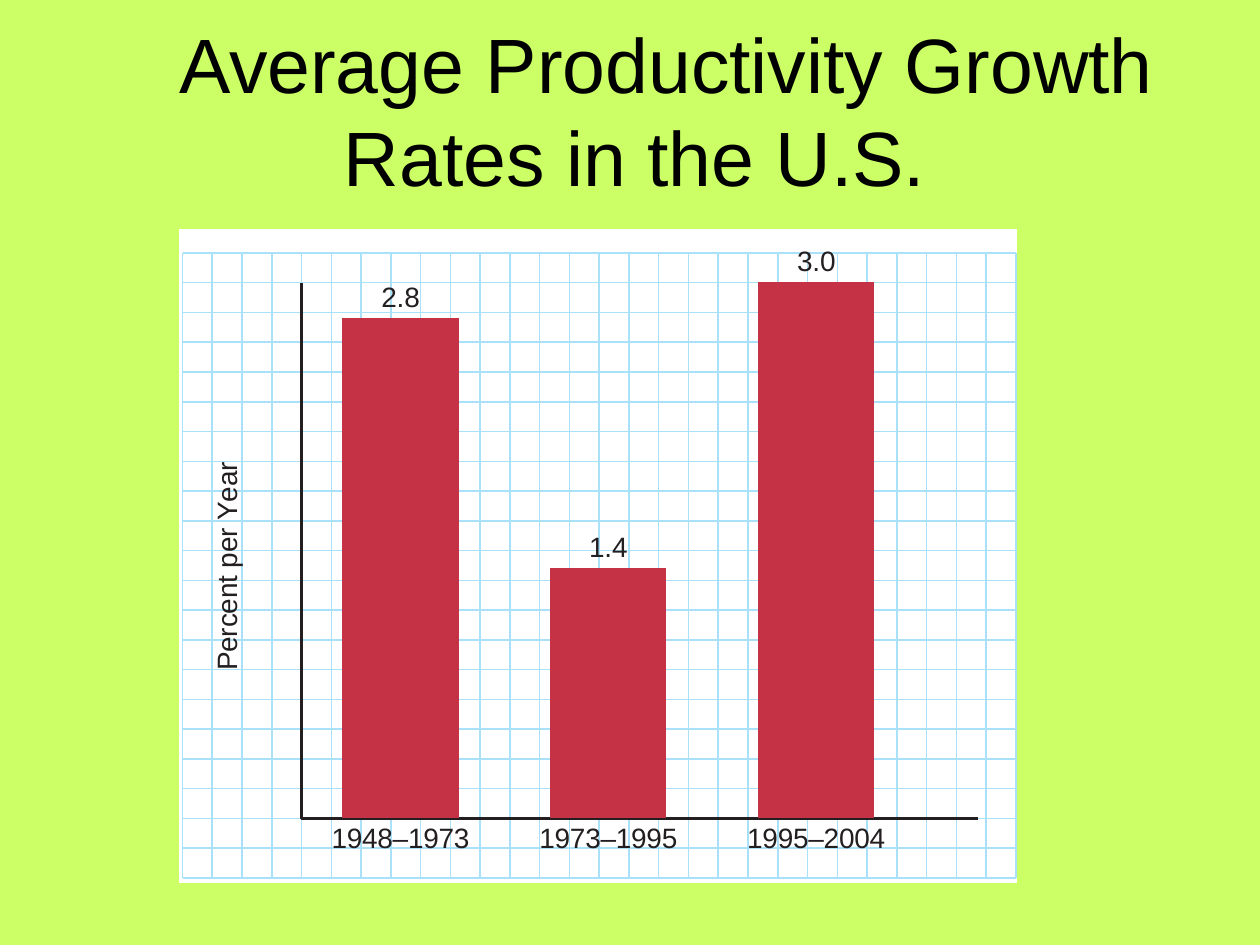
from dataclasses import dataclass

from lxml.etree import SubElement
from pptx import Presentation
from pptx.chart.data import CategoryChartData
from pptx.dml.color import RGBColor
from pptx.enum.chart import XL_CHART_TYPE, XL_LABEL_POSITION, XL_TICK_LABEL_POSITION, XL_TICK_MARK
from pptx.enum.shapes import MSO_SHAPE
from pptx.enum.text import MSO_ANCHOR, MSO_AUTO_SIZE, PP_ALIGN
from pptx.oxml import parse_xml
from pptx.oxml.ns import nsdecls, qn
from pptx.util import Cm, Pt


@dataclass(frozen=True)
class Theme:
    font: str = "Arial"
    background: RGBColor = RGBColor(0xCC, 0xFF, 0x66)
    title: RGBColor = RGBColor(0x01, 0x00, 0x00)
    panel: RGBColor = RGBColor(0xFF, 0xFF, 0xFF)
    grid: RGBColor = RGBColor(0xAA, 0xE1, 0xFA)
    ink: RGBColor = RGBColor(0x23, 0x1F, 0x20)
    bar: RGBColor = RGBColor(0xC5, 0x32, 0x46)
    title_size: Pt = Pt(44)
    label_size: Pt = Pt(16)


@dataclass(frozen=True)
class Box:
    """A region of the slide, in centimetres."""
    left: float
    top: float
    width: float
    height: float

    def emu(self):
        return Cm(self.left), Cm(self.top), Cm(self.width), Cm(self.height)


THEME = Theme()
CELL, COLS, ROWS = 0.6, 28, 21      # graph paper squares
GRID_DX, GRID_DY = 0.07, 0.48       # graph paper inside the panel
AXIS_COL, AXIS_ROW = 4, 19          # grid lines where the axes meet
PLOT_WIDTH, PLOT_HEIGHT = 12.57, 11.54
AXIS_MAX = 3.2
GROWTH = {"1948–1973": 2.8, "1973–1995": 1.4, "1995–2004": 3.0}


def format_font(font, size, color):
    font.name, font.size, font.bold = THEME.font, size, False
    font.color.rgb = color


def add_title(s, box, text):
    title = s.shapes.title
    title.left, title.top, title.width, title.height = box.emu()
    tf = title.text_frame
    tf.text = text
    tf.word_wrap = True
    tf.auto_size = MSO_AUTO_SIZE.NONE
    tf.vertical_anchor = MSO_ANCHOR.MIDDLE
    p = tf.paragraphs[0]
    p.alignment = PP_ALIGN.CENTER
    p._p.get_or_add_pPr().set("indent", str(Cm(1.27)))
    format_font(p.runs[0].font, THEME.title_size, THEME.title)


def add_polylines(s, lines, color, width):
    """Draw open lines, each a list of points in centimetres, as one shape."""
    builder = None
    for line in lines:
        start, *rest = [(Cm(x), Cm(y)) for x, y in line]
        if builder is None:
            builder = s.shapes.build_freeform(*start)
        else:
            builder.move_to(*start)
        builder.add_line_segments(rest, close=False)
    sp = builder.convert_to_shape()
    sp.shadow.inherit = False
    sp.fill.background()
    sp.line.color.rgb = color
    sp.line.width = width


def add_graph_paper(s, box):
    panel = s.shapes.add_shape(MSO_SHAPE.RECTANGLE, *box.emu())
    panel.shadow.inherit = False
    panel.fill.solid()
    panel.fill.fore_color.rgb = THEME.panel
    panel.line.fill.background()

    # Grid lines
    left, top = box.left + GRID_DX, box.top + GRID_DY
    right, bottom = left + COLS * CELL, top + ROWS * CELL
    xs = [left + i * CELL for i in range(COLS + 1)]
    ys = [top + i * CELL for i in range(ROWS + 1)]
    lines = [[(x, top), (x, bottom)] for x in xs] + [[(left, y), (right, y)] for y in ys]
    add_polylines(s, lines, THEME.grid, Pt(0.88))

    # Axes
    x, y = xs[AXIS_COL], ys[AXIS_ROW]
    add_polylines(s, [[(x + 13.64, y), (x, y), (x, ys[1])]], THEME.ink, Pt(1.5))


def set_layout(parent, index, **values):
    """Place a chart part by fractions of the chart's size."""
    for old in parent.findall(qn("c:layout")):
        parent.remove(old)
    layout = parse_xml(f"<c:layout {nsdecls('c')}/>")
    manual = SubElement(layout, qn("c:manualLayout"))
    if "w" in values:
        SubElement(manual, qn("c:layoutTarget")).set("val", "inner")
    for mode in ("xMode", "yMode"):
        SubElement(manual, qn("c:" + mode)).set("val", "edge")
    for key, value in values.items():
        SubElement(manual, qn("c:" + key)).set("val", f"{value:.4f}")
    parent.insert(index, layout)


def add_growth_chart(s, box):
    data = CategoryChartData(number_format="0.0")
    data.categories = list(GROWTH)
    data.add_series("Percent per Year", list(GROWTH.values()))
    chart = s.shapes.add_chart(XL_CHART_TYPE.COLUMN_CLUSTERED, *box.emu(), data).chart
    chart.has_title = chart.has_legend = False
    format_font(chart.font, THEME.label_size, THEME.ink)

    # Bars and their values
    plot = chart.plots[0]
    plot.gap_width = 79
    plot.vary_by_categories = False
    fill = plot.series[0].format.fill
    fill.solid()
    fill.fore_color.rgb = THEME.bar
    plot.has_data_labels = True
    labels = plot.data_labels
    labels.show_value = True
    labels.number_format, labels.number_format_is_linked = "0.0", False
    labels.position = XL_LABEL_POSITION.OUTSIDE_END
    format_font(labels.font, THEME.label_size, THEME.ink)

    # Axis scales, with the lines left to the graph paper
    for axis in (chart.category_axis, chart.value_axis):
        axis.has_major_gridlines = False
        axis.major_tick_mark = axis.minor_tick_mark = XL_TICK_MARK.NONE
        axis.format.line.fill.background()
    value_axis = chart.value_axis
    value_axis.minimum_scale, value_axis.maximum_scale = 0, AXIS_MAX
    value_axis.tick_label_position = XL_TICK_LABEL_POSITION.NONE
    tf = value_axis.axis_title.text_frame
    tf.text = "Percent per Year"
    tf._txBody.bodyPr.set("rot", "-5400000")
    tf._txBody.bodyPr.set("vert", "horz")
    format_font(tf.paragraphs[0].runs[0].font, THEME.label_size, THEME.ink)

    # Plot area stands on the horizontal axis
    base = GRID_DY + AXIS_ROW * CELL
    space = chart._chartSpace
    set_layout(space.chart.plotArea, 0,
               x=(GRID_DX + AXIS_COL * CELL - 0.1) / box.width,
               y=(base - PLOT_HEIGHT) / box.height,
               w=PLOT_WIDTH / box.width, h=PLOT_HEIGHT / box.height)
    set_layout(value_axis.axis_title._element, 1, x=0.5 / box.width, y=4.6 / box.height)
    space.chart.addnext(parse_xml(
        f"<c:spPr {nsdecls('c', 'a')}><a:noFill/><a:ln><a:noFill/></a:ln></c:spPr>"))


def main():
    prs = Presentation()
    prs.slide_width, prs.slide_height = Cm(25.4), Cm(19.05)
    s = prs.slides.add_slide(prs.slide_layouts[5])
    s.background.fill.solid()
    s.background.fill.fore_color.rgb = THEME.background

    add_title(s, Box(0.64, 0.61, 24.33, 3.18), "Average Productivity Growth Rates in the U.S.")
    panel = Box(3.61, 4.62, 16.89, 13.18)
    add_graph_paper(s, panel)
    add_growth_chart(s, panel)
    prs.save("out.pptx")


if __name__ == "__main__":
    main()
